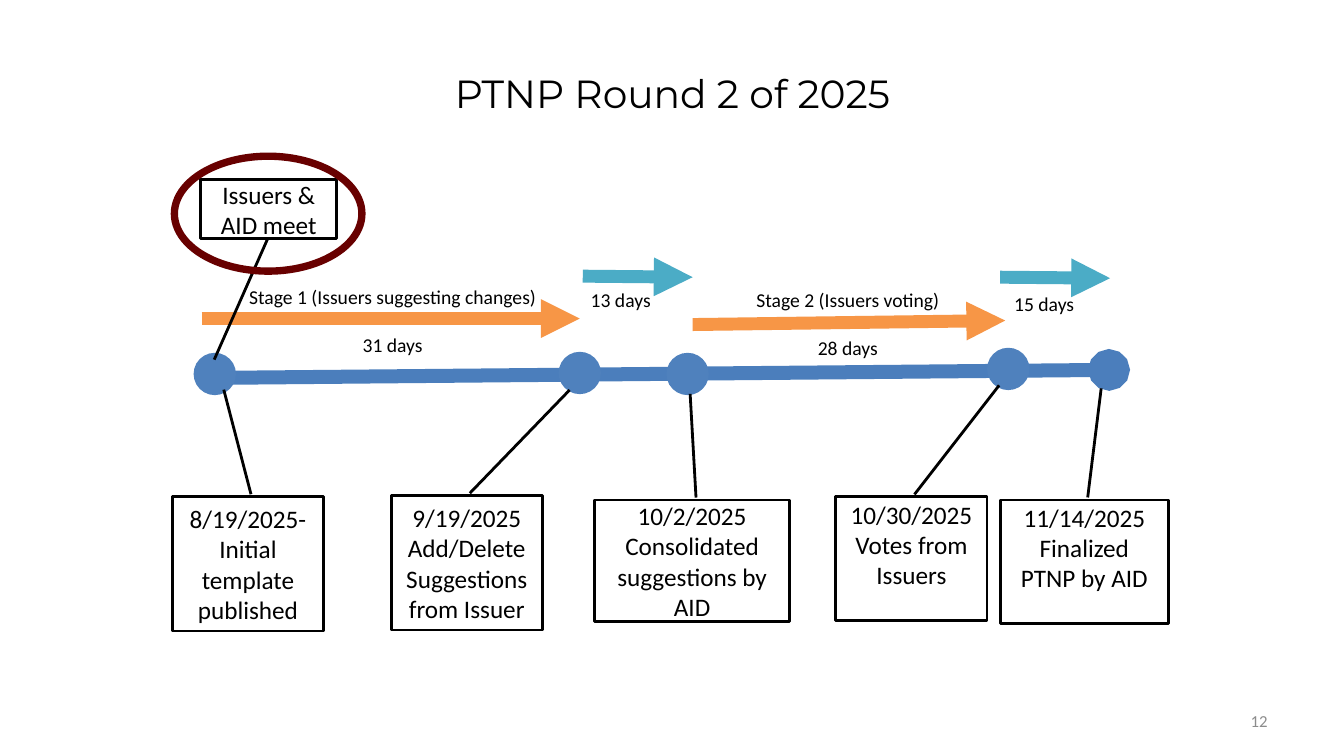
from dataclasses import dataclass

from lxml.etree import SubElement
from pptx import Presentation
from pptx.dml.color import RGBColor
from pptx.enum.shapes import MSO_CONNECTOR, MSO_SHAPE
from pptx.enum.text import MSO_ANCHOR, PP_ALIGN
from pptx.oxml.ns import qn
from pptx.util import Inches, Pt


@dataclass(frozen=True)
class Theme:
    ink: str = "000000"
    paper: str = "FFFFFF"
    muted: str = "8C8C8C"
    axis: str = "4B7EBC"
    node: str = "4F81BD"
    stage: str = "F79646"
    gap: str = "4BACC6"
    highlight: str = "680000"
    title_font: str = "Montserrat"
    body_font: str = "Calibri"
    title_size: int = 28
    callout_size: int = 18
    label_size: int = 14
    number_size: int = 12


THEME = Theme()


def place(box):
    return [Inches(length) for length in box]


def write(shape, text, size, color=THEME.ink, align=PP_ALIGN.CENTER,
          anchor=MSO_ANCHOR.TOP, font=THEME.body_font):
    frame = shape.text_frame
    frame.text = text
    frame.word_wrap = True
    frame.vertical_anchor = anchor
    for para in frame.paragraphs:
        para.alignment = align
        for span in para.runs:
            span.font.size = Pt(size)
            span.font.name = font
            span.font.color.rgb = RGBColor.from_string(color)
    return frame


def add_label(slide, box, text, size=THEME.label_size, **style):
    return write(slide.shapes.add_textbox(*place(box)), text, size, **style)


def add_outline(slide, kind, box, fill=None, line=None, width=0):
    shape = slide.shapes.add_shape(kind, *place(box))
    shape.shadow.inherit = False
    if fill:
        shape.fill.solid()
        shape.fill.fore_color.rgb = RGBColor.from_string(fill)
    else:
        shape.fill.background()
    if line:
        shape.line.color.rgb = RGBColor.from_string(line)
        shape.line.width = Pt(width)
    else:
        shape.line.fill.background()
    return shape


def add_line(slide, start, end, color, width, tip):
    line = slide.shapes.add_connector(MSO_CONNECTOR.STRAIGHT, *place(start + end))
    line.line.color.rgb = RGBColor.from_string(color)
    line.line.width = Pt(width)
    SubElement(line.line._get_or_add_ln(), qn("a:tailEnd"), type=tip)
    SubElement(line._element.spPr, qn("a:effectLst"))


def add_callout(slide, box, text, pointer, anchor=MSO_ANCHOR.MIDDLE):
    """Pointer holds the start y, x and the end y, x as shares of the box."""
    callout = add_outline(slide, MSO_SHAPE.LINE_CALLOUT_1, box, THEME.paper, THEME.ink, 2)
    for index, share in enumerate(pointer):
        callout.adjustments[index] = share
    frame = write(callout, text, THEME.callout_size, anchor=anchor)
    if anchor == MSO_ANCHOR.TOP:
        frame.margin_top = Inches(0.02)


def add_title(slide, box, text):
    title = slide.shapes.title
    title.left, title.top, title.width, title.height = place(box)
    write(title, text, THEME.title_size, anchor=MSO_ANCHOR.MIDDLE, font=THEME.title_font)


def add_axis(slide, box):
    left, top, width, height = box
    add_line(slide, (left, top + height), (left + width, top), THEME.axis, 10, "oval")
    diameter = 0.42
    for center_x, center_y in ((2.13, 3.71), (5.75, 3.7), (6.82, 3.71), (10, 3.66)):
        corner = (center_x - diameter / 2, center_y - diameter / 2)
        add_outline(slide, MSO_SHAPE.FLOWCHART_CONNECTOR,
                    corner + (diameter, diameter), THEME.node)


def add_stage(slide, box, rise, name, days, label_box):
    left, top, width = box
    add_line(slide, (left, top), (left + width, top - rise), THEME.stage, 9.25, "triangle")
    frame = add_label(slide, label_box, f"{name}\n{days}")
    frame.paragraphs[1].space_before = Pt(17)


def add_gap(slide, box, days, label_corner):
    left, top, width = box
    add_line(slide, (left, top), (left + width, top + 0.01), THEME.gap, 9.25, "triangle")
    add_label(slide, label_corner + (1.02, 0.34), days, align=PP_ALIGN.LEFT)


def add_milestones(slide):
    start = (-0.02, 0.52)
    milestones = (
        ((9.92, 4.96, 1.67, 1.23), "11/14/2025\nFinalized PTNP by AID",
         (-0.9, 0.6), MSO_ANCHOR.TOP),
        ((8.29, 4.93, 1.5, 1.23), "10/30/2025 Votes from Issuers",
         (-0.9, 1.08), MSO_ANCHOR.TOP),
        ((5.9, 4.96, 1.93, 1.21), "10/2/2025\nConsolidated suggestions by AID",
         (-0.87, 0.49), MSO_ANCHOR.MIDDLE),
        ((1.71, 4.93, 1.5, 1.33), "8/19/2025-Initial template published",
         (-0.8, 0.34), MSO_ANCHOR.MIDDLE),
        ((3.88, 4.92, 1.5, 1.33), "9/19/2025\nAdd/Delete Suggestions from Issuer",
         (-0.79, 1.18), MSO_ANCHOR.MIDDLE),
    )
    for box, text, end, anchor in milestones:
        add_callout(slide, box, text, start + end, anchor)


def add_meeting(slide, box):
    left, top, width, height = box
    add_callout(slide, (left + 0.26, top + 0.23, 1.35, 0.59), "Issuers & AID meet",
                (1.01, 0.49, 3.03, 0.1))
    add_outline(slide, MSO_SHAPE.OVAL, box, line=THEME.highlight, width=5.25)


def build_timeline(deck):
    slide = deck.slides.add_slide(deck.slide_layouts[5])
    add_title(slide, (0.67, 0.3, 12, 1.25), "PTNP Round 2 of 2025")
    add_label(slide, (9.56, 6.95, 3.11, 0.4), "12", THEME.number_size,
              color=THEME.muted, align=PP_ALIGN.RIGHT, anchor=MSO_ANCHOR.MIDDLE)
    # Time axis, with the stages and the gaps above it
    add_axis(slide, (2, 3.67, 9, 0.08))
    add_stage(slide, (2, 3.16, 3.75), 0, "Stage 1 (Issuers suggesting changes)",
              "31 days", (2.28, 2.78, 3.23, 0.81))
    add_stage(slide, (6.87, 3.22, 3.1), 0.04, "Stage 2 (Issuers voting)",
              "28 days", (7.03, 2.81, 2.76, 0.81))
    add_gap(slide, (5.78, 2.74, 1.09), "13 days", (5.76, 2.81))
    add_gap(slide, (9.92, 2.75, 1.09), "15 days", (9.96, 2.85))
    # Dated callouts and the circled meeting
    add_milestones(slide)
    add_meeting(slide, (1.73, 1.55, 1.86, 1.14))


def main():
    deck = Presentation()
    deck.slide_width, deck.slide_height = Inches(13.33), Inches(7.5)
    build_timeline(deck)
    deck.save("out.pptx")


if __name__ == "__main__":
    main()
